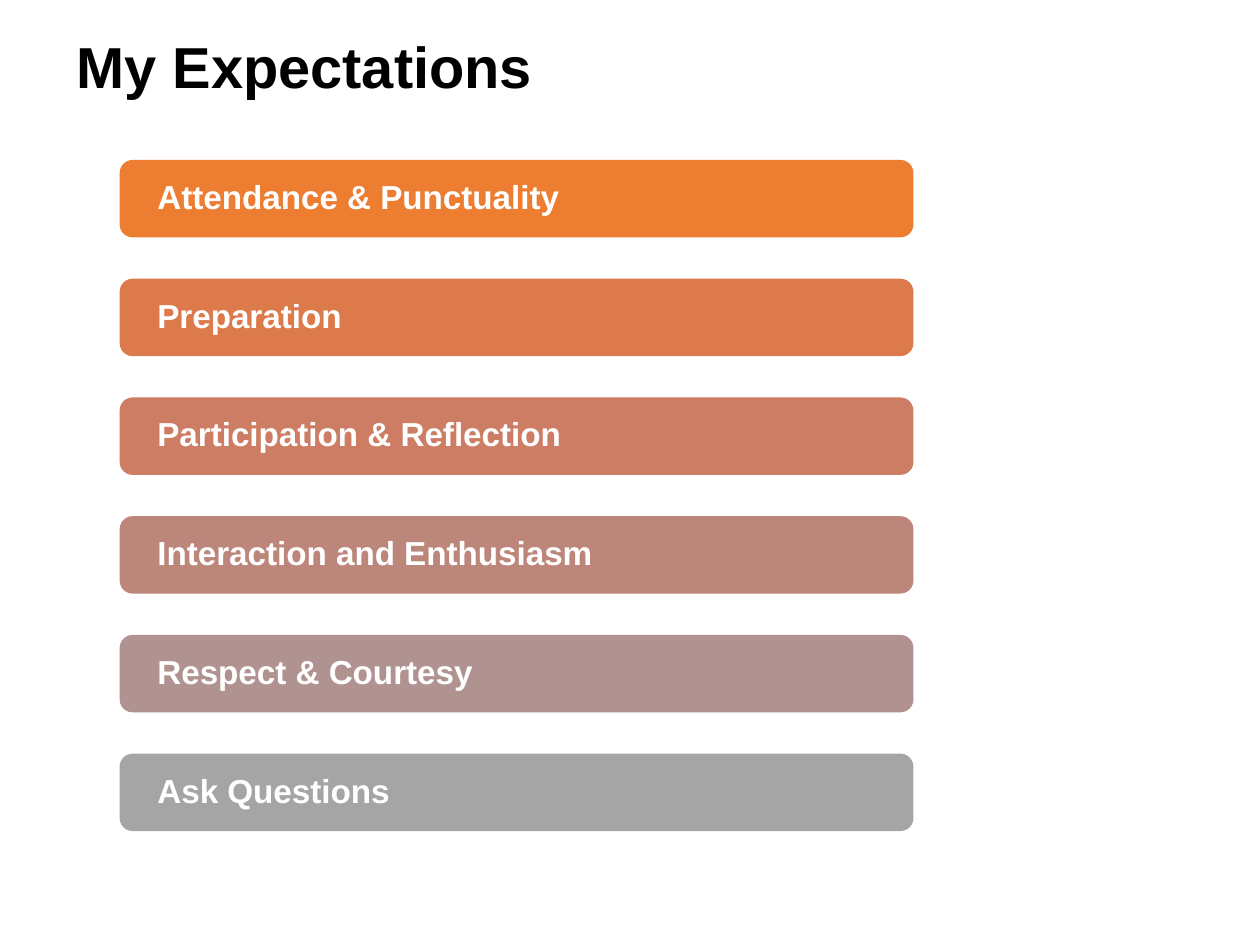
from pptx import Presentation
from pptx.dml.color import RGBColor
from pptx.enum.shapes import MSO_SHAPE
from pptx.enum.text import MSO_ANCHOR, PP_ALIGN
from pptx.util import Pt

ROUNDED = MSO_SHAPE.ROUNDED_RECTANGLE
MIDDLE = MSO_ANCHOR.MIDDLE
LEFT = PP_ALIGN.LEFT

BLACK = RGBColor(0x00, 0x00, 0x00)
WHITE = RGBColor(0xFF, 0xFF, 0xFF)

EXPECTATIONS = [
    ("Attendance & Punctuality", RGBColor(0xED, 0x7D, 0x31)),
    ("Preparation", RGBColor(0xDC, 0x7A, 0x4B)),
    ("Participation & Reflection", RGBColor(0xCC, 0x7D, 0x64)),
    ("Interaction and Enthusiasm", RGBColor(0xBD, 0x86, 0x7B)),
    ("Respect & Courtesy", RGBColor(0xB0, 0x93, 0x91)),
    ("Ask Questions", RGBColor(0xA5, 0xA5, 0xA5)),
]
BAR_HEIGHT = 44.25


def write_line(shape, text, size, color, inset):
    tf = shape.text_frame
    tf.word_wrap = True
    tf.vertical_anchor = MIDDLE
    tf.margin_left = tf.margin_right = Pt(inset)
    tf.margin_top = tf.margin_bottom = 0
    p = tf.paragraphs[0]
    p.text = text
    p.alignment = LEFT
    p.line_spacing = 0.9
    p.font.name = "Arial"
    p.font.size = Pt(size)
    p.font.bold = True
    p.font.color.rgb = color


def add_title(s, text, x, y, w, h):
    box = s.shapes.add_textbox(Pt(x), Pt(y), Pt(w), Pt(h))
    write_line(box, text, 33, BLACK, 7.2)


def add_bars(s, items, x, y, w, h):
    """Spread one coloured bar per item evenly over the height of the box."""
    pitch = (h - BAR_HEIGHT) / (len(items) - 1)
    for i, (text, color) in enumerate(items):
        bar = s.shapes.add_shape(ROUNDED, Pt(x), Pt(y + i * pitch), Pt(w), Pt(BAR_HEIGHT))
        bar.shadow.inherit = False
        bar.fill.solid()
        bar.fill.fore_color.rgb = color
        bar.line.fill.background()
        write_line(bar, text, 19, WHITE, 19.4)


def main():
    prs = Presentation()
    prs.slide_width, prs.slide_height = Pt(720), Pt(540)
    s = prs.slides.add_slide(prs.slide_layouts[6])
    add_title(s, "My Expectations", 36.75, 1.5, 648.5, 76.5)
    add_bars(s, EXPECTATIONS, 68.4, 91.4, 453.6, 383.5)
    prs.save("out.pptx")


if __name__ == "__main__":
    main()
